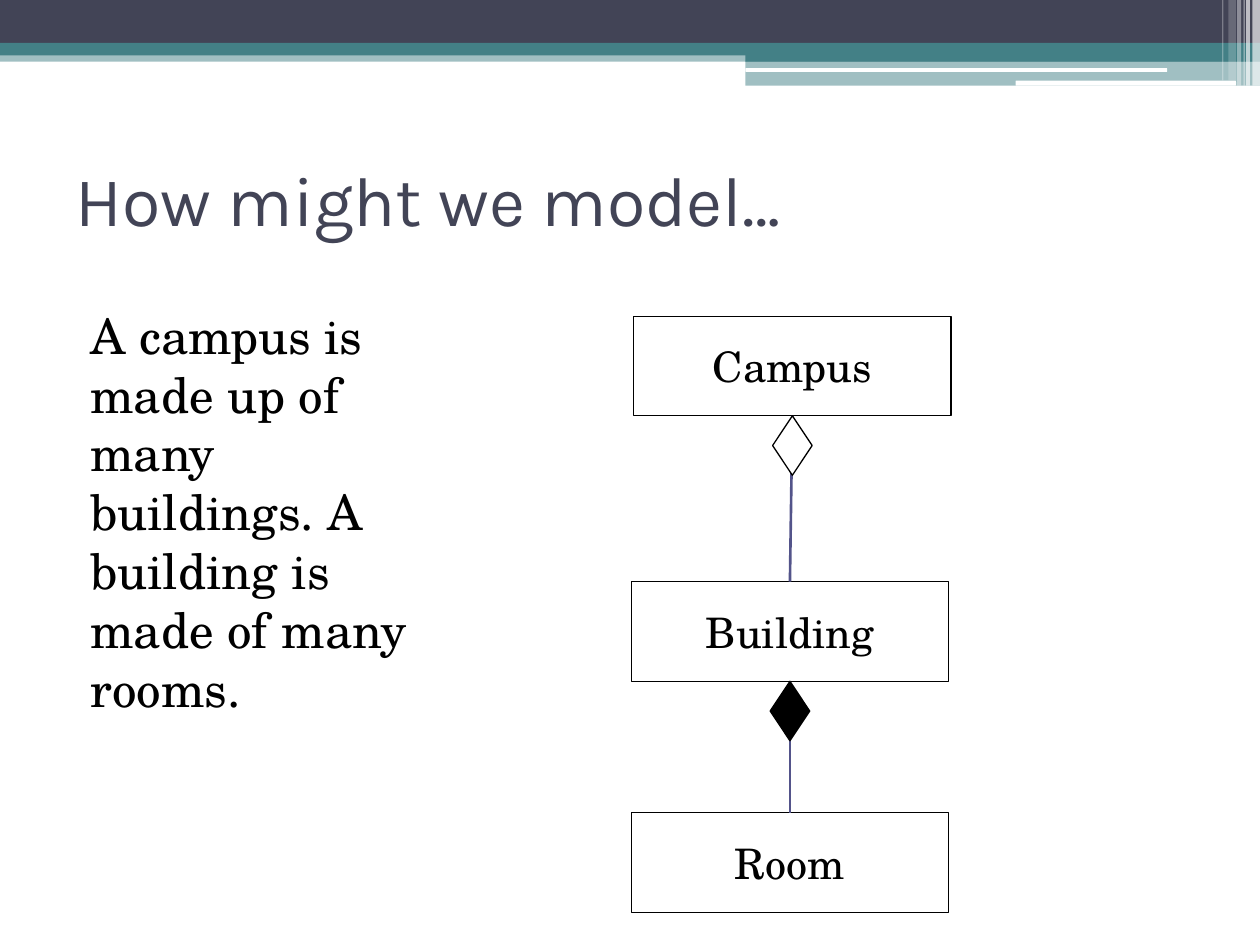
import pptx
import pptx.util
import pptx.dml.color
import pptx.enum.shapes
import pptx.enum.text
import pptx.oxml.ns
import lxml.etree

Pt = pptx.util.Pt
KIND = pptx.enum.shapes.MSO_SHAPE
ALIGN = pptx.enum.text.PP_ALIGN
ANCHOR = pptx.enum.text.MSO_ANCHOR
SERIF = "TeX Gyre Schola"
TEAL, NAVY, WHITE, BLACK = "438086", "424456", "FFFFFF", "000000"


def color(code):
    """Turn a hex string into a colour."""
    return pptx.dml.color.RGBColor.from_string(code)


def child(node, tag, **attrs):
    """Add a DrawingML child element."""
    return lxml.etree.SubElement(node, pptx.oxml.ns.qn(tag), **attrs)


def shape(slide, kind, box, fill=None, line=None, alpha=100):
    """Add a preset shape with an optional fill, outline and opacity."""
    item = slide.shapes.add_shape(kind, *map(Pt, box))
    item.shadow.inherit = False
    if fill:
        item.fill.solid()
        item.fill.fore_color.rgb = color(fill)
        if alpha < 100:
            tint = item.fill._xPr.find(".//" + pptx.oxml.ns.qn("a:srgbClr"))
            child(tint, "a:alpha", val=str(alpha * 1000))
    else:
        item.fill.background()
    if line:
        item.line.color.rgb = color(line)
        item.line.width = Pt(0.75)
    else:
        item.line.fill.background()
    return item


def write(frame, text, size, face, code, align=ALIGN.LEFT):
    """Write one run in the first paragraph of a frame."""
    frame.word_wrap = True
    para = frame.paragraphs[0]
    para.alignment = align
    run = para.add_run()
    run.text = text
    run.font.size = Pt(size)
    run.font.name = face
    run.font.color.rgb = color(code)
    return para


def banner(slide, box):
    """Draw the banded header with its stripes at the right edge."""
    left, top, width, height = box
    right, split = left + width, left + 426
    bands = [
        (left, 28.8, width, 6.5, TEAL, 50),
        (left, 0, width, 24.5, NAVY, 100),
        (left, 24.5, width, 7.2, TEAL, 100),
        (split, 28, right - split, 7.2, TEAL, 100),
        (split, 34.6, right - split, 14.4, TEAL, 50),
    ]
    for x, y, w, h, fill, alpha in bands:
        shape(slide, KIND.RECTANGLE, (x, top + y, w, h), fill, alpha=alpha)
    for x, y, w, h in [(split, 38.9, 241, 2.2), (left + 580.3, 46.1, 126, 2.9)]:
        shape(slide, KIND.ROUNDED_RECTANGLE, (x, top + y, w, h), WHITE)
    stripes = [
        (4.3, 4.3, 0, 65), (7.9, 2.2, 0, 65), (9.4, 0.7, 0, 60),
        (13, 2.2, 0, 40), (18, 4.3, 3, 20), (21.6, 0.7, 3, 30),
    ]
    for back, wide, cut, alpha in stripes:
        area = (right - back, top, wide, height - cut)
        shape(slide, KIND.RECTANGLE, area, WHITE, alpha=alpha)


def heading(slide, box, text):
    """Place and format the title."""
    title = slide.shapes.title
    title.left, title.top, title.width, title.height = map(Pt, box)
    title.text_frame.vertical_anchor = ANCHOR.MIDDLE
    write(title.text_frame, text, 40, "Karla", NAVY)


def prompt(slide, box, text):
    """Place the indented question text."""
    frame = slide.shapes.add_textbox(*map(Pt, box)).text_frame
    frame.margin_top = Pt(6.6)
    frame.margin_right = Pt(12)
    para = write(frame, text, 28, SERIF, BLACK)
    props = para._p.get_or_add_pPr()
    props.set("marL", str(Pt(8.64)))
    props.set("indent", "0")


def node(slide, box, name):
    """Draw one class box."""
    item = shape(slide, KIND.RECTANGLE, box, line=BLACK)
    item.text_frame.vertical_anchor = ANCHOR.MIDDLE
    write(item.text_frame, name, 24, SERIF, BLACK, ALIGN.CENTER)
    return item


def link(slide, whole, part, fill):
    """Join a whole to its part, with a diamond below the whole."""
    wire = slide.shapes.add_connector(
        pptx.enum.shapes.MSO_CONNECTOR.STRAIGHT, 0, 0, 0, 0)
    wire.begin_connect(whole, 2)
    wire.end_connect(part, 0)
    wire.line.color.rgb = color("53548A")
    wire.line.width = Pt(1.5)
    child(wire._element.spPr, "a:effectLst")
    wide = 22.6
    left = (whole.left + whole.width / 2) / Pt(1) - wide / 2
    top = (whole.top + whole.height) / Pt(1)
    shape(slide, KIND.DIAMOND, (left, top, wide, 34), fill, BLACK)


def diagram(slide, box):
    """Draw the class diagram."""
    left, top, width, height = box
    tall = 56.9
    campus = node(slide, (left + 1.4, top, width, tall), "Campus")
    building = node(slide, (left, top + 151.7, width, tall), "Building")
    room = node(slide, (left, top + height - tall, width, tall), "Room")
    link(slide, building, room, BLACK)
    link(slide, campus, building, WHITE)


def main():
    """Build and save the slide."""
    deck = pptx.Presentation()
    deck.slide_width, deck.slide_height = Pt(720), Pt(540)
    slide = deck.slides.add_slide(deck.slide_layouts[5])
    banner(slide, (0, 0, 720, 49))
    heading(slide, (36, 71.3, 648, 84.2), "How might we model…")
    prompt(slide, (36, 167.8, 227.5, 340.6),
           "A campus is made up of many buildings. "
           "A building is made of many rooms.")
    diagram(slide, (360.7, 180.7, 181.4, 340.6))
    deck.save("out.pptx")


if __name__ == "__main__":
    main()
